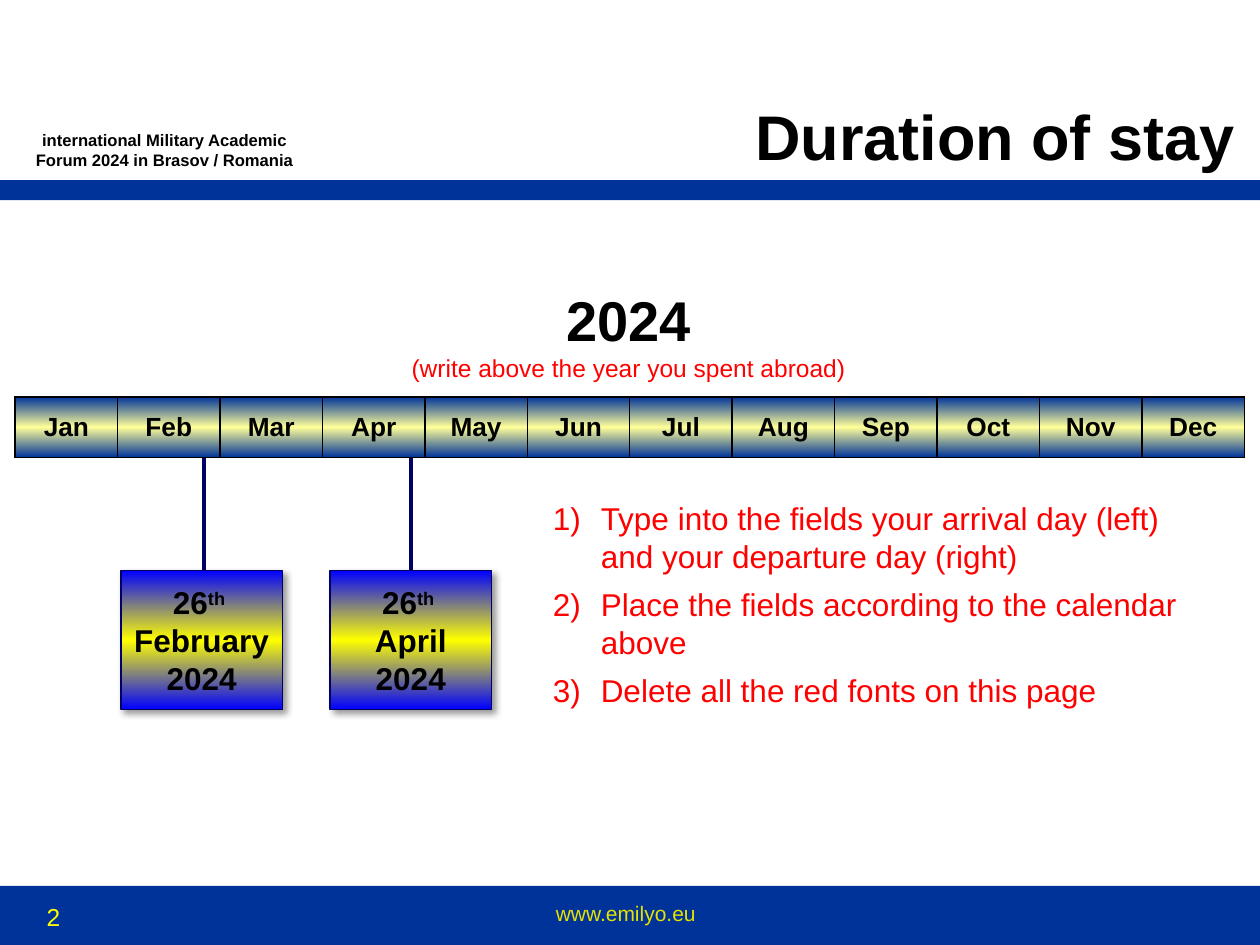
from dataclasses import dataclass

from pptx import Presentation
from pptx.dml.color import RGBColor
from pptx.enum.shapes import MSO_CONNECTOR as Connector, MSO_SHAPE as Preset
from pptx.enum.text import MSO_ANCHOR as Anchor, PP_ALIGN as Align
from pptx.oxml import parse_xml
from pptx.oxml.ns import nsdecls, qn
from pptx.util import Inches, Pt

COLORS = {
    "band": "003399", "cream": "FFFF99", "blue": "0000FF", "yellow": "FFFF00",
    "navy": "000066", "black": "000000", "red": "FF0000", "footer": "E7E200",
}
MONTHS = "Jan Feb Mar Apr May Jun Jul Aug Sep Oct Nov Dec".split()
STEPS = [
    "Type into the fields your arrival day (left) and your departure day (right)",
    "Place the fields according to the calendar above",
    "Delete all the red fonts on this page",
]
BARS = [(0, 1.43, 10.04, 0.16), (-0.04, 7.03, 10.05, 0.48)]
CALENDAR = (0.12, 3.15, 9.76, 0.48)


@dataclass
class Line:
    text: str
    size: float
    color: str = "black"
    bold: bool = False
    align: Align = Align.CENTER
    raised: str = ""


@dataclass
class Label:
    place: tuple
    lines: list
    frame: dict


@dataclass
class Stay:
    left: float
    stem: float
    month: str


FLUSH = {"margin_left": 0, "margin_top": 0, "margin_right": 0, "margin_bottom": 0}
LABELS = [
    Label((4.1, 7.1, 1.78, 0.35), [Line("www.emilyo.eu ", 12, "footer")], {"word_wrap": True}),
    Label((0.13, 7.11, 0.59, 0.34), [Line("2", 14, "yellow")], {"word_wrap": False}),
    Label((0.18, 1.03, 2.25, 0.36),
          [Line("international Military Academic Forum 2024 in Brasov / Romania", 9.5, bold=True)],
          {"word_wrap": True, **FLUSH}),
    Label((1.38, 0.12, 8.42, 1.25), [Line("Duration of stay", 36, bold=True, align=Align.RIGHT)],
          {"word_wrap": True, "vertical_anchor": Anchor.BOTTOM, **FLUSH}),
    Label((3.16, 2.22, 3.66, 0.88),
          [Line("2024", 32, bold=True), Line("(write above the year you spent abroad)", 14, "red")],
          {"word_wrap": False}),
]
STAYS = [Stay(0.96, 1.62, "February"), Stay(2.62, 3.26, "April")]


def inches(place: tuple) -> list:
    return [Inches(length) for length in place]


def rgb(name: str) -> RGBColor:
    return RGBColor.from_string(COLORS[name])


def set_all(target, values: dict) -> None:
    for name, value in values.items():
        setattr(target, name, value)


def add_span(para, text: str, line: Line):
    span = para.add_run()
    span.text = text
    set_all(span.font, {"name": "Arial", "size": Pt(line.size), "bold": line.bold})
    span.font.color.rgb = rgb(line.color)
    return span


def write(frame, lines: list, values: dict) -> None:
    set_all(frame, values)
    for index, line in enumerate(lines):
        para = frame.add_paragraph() if index else frame.paragraphs[0]
        para.alignment = line.align
        add_span(para, line.text, line)
        if line.raised:
            add_span(para, line.raised, line).font._element.set("baseline", "30000")


def add_label(page, label: Label):
    box = page.shapes.add_textbox(*inches(label.place))
    write(box.text_frame, label.lines, label.frame)
    return box


def add_bar(page, place: tuple) -> None:
    bar = page.shapes.add_shape(Preset.RECTANGLE, *inches(place))
    bar.shadow.inherit = False
    bar.fill.solid()
    bar.fill.fore_color.rgb = rgb("band")
    bar.line.fill.background()


def fill_mirrored(fill, element, edge: str, middle: str) -> None:
    fill.gradient()
    fill.gradient_angle = 270
    stops = next(element.iter(qn("a:gsLst")))
    stops.clear()
    for position, color in ((0, edge), (50, middle), (100, edge)):
        stops.append(parse_xml(
            f'<a:gs {nsdecls("a")} pos="{position * 1000}">'
            f'<a:srgbClr val="{COLORS[color]}"/></a:gs>'))


def add_calendar(page) -> None:
    table = page.shapes.add_table(1, len(MONTHS), *inches(CALENDAR)).table
    set_all(table, {"first_row": False, "horz_banding": False})
    for column, month in enumerate(MONTHS):
        table.columns[column].width = Inches(CALENDAR[2] / len(MONTHS))
        cell = table.cell(0, column)
        set_all(cell, {
            "vertical_anchor": Anchor.MIDDLE,
            "margin_left": Inches(0.11), "margin_right": Inches(0.11),
            "margin_top": Inches(0.06), "margin_bottom": Inches(0.06),
        })
        write(cell.text_frame, [Line(month, 15, bold=True)], {})
        fill_mirrored(cell.fill, cell._tc, "band", "cream")
        for index, side in enumerate(("lnL", "lnR", "lnT", "lnB")):
            cell._tc.tcPr.insert(index, parse_xml(
                f'<a:{side} {nsdecls("a")} w="{Pt(1)}"><a:solidFill>'
                f'<a:srgbClr val="{COLORS["black"]}"/></a:solidFill></a:{side}>'))


def add_stem(page, stay: Stay) -> None:
    stem = page.shapes.add_connector(
        Connector.STRAIGHT, *inches((stay.stem, 4.77, stay.stem, 3.59)))
    stem.line.color.rgb = rgb("navy")
    stem.line.width = Pt(2.5)
    stem._element.spPr.append(parse_xml(f'<a:effectLst {nsdecls("a")}/>'))


def add_stay(page, stay: Stay) -> None:
    box = page.shapes.add_shape(Preset.RECTANGLE, *inches((stay.left, 4.53, 1.28, 1.1)))
    fill_mirrored(box.fill, box._element, "blue", "yellow")
    box.line.color.rgb = rgb("navy")
    box.line.width = Pt(0.75)
    box.shadow.inherit = False
    box._element.spPr.find(qn("a:effectLst")).append(parse_xml(
        f'<a:outerShdw {nsdecls("a")} blurRad="{Pt(4)}" dist="{Pt(3)}" dir="2700000" '
        f'algn="tl" rotWithShape="0"><a:srgbClr val="{COLORS["black"]}">'
        '<a:alpha val="40000"/></a:srgbClr></a:outerShdw>'))
    lines = [Line("26", 18, bold=True, raised="th ")]
    lines += [Line(text, 18, bold=True) for text in (stay.month, "2024")]
    write(box.text_frame, lines, {"word_wrap": False, "vertical_anchor": Anchor.MIDDLE})


def add_steps(page) -> None:
    lines = [Line(step, 18, "red", align=Align.LEFT) for step in STEPS]
    box = add_label(page, Label((4.29, 3.91, 5.43, 1.78), lines, {"word_wrap": True}))
    for para in box.text_frame.paragraphs:
        para.space_after = Pt(6)
        props = para._p.get_or_add_pPr()
        props.set("marL", str(Inches(0.38)))
        props.set("indent", str(-Inches(0.38)))
        props.append(parse_xml(f'<a:buFont {nsdecls("a")} typeface="+mj-lt"/>'))
        props.append(parse_xml(f'<a:buAutoNum {nsdecls("a")} type="arabicParenR"/>'))


def main() -> None:
    deck = Presentation()
    set_all(deck, {"slide_width": Inches(10), "slide_height": Inches(7.5)})
    page = deck.slides.add_slide(deck.slide_layouts[6])
    for place in BARS:
        add_bar(page, place)
    for stay in STAYS:
        add_stem(page, stay)
    for label in LABELS:
        add_label(page, label)
    add_calendar(page)
    for stay in STAYS:
        add_stay(page, stay)
    add_steps(page)
    deck.save("out.pptx")


if __name__ == "__main__":
    main()
